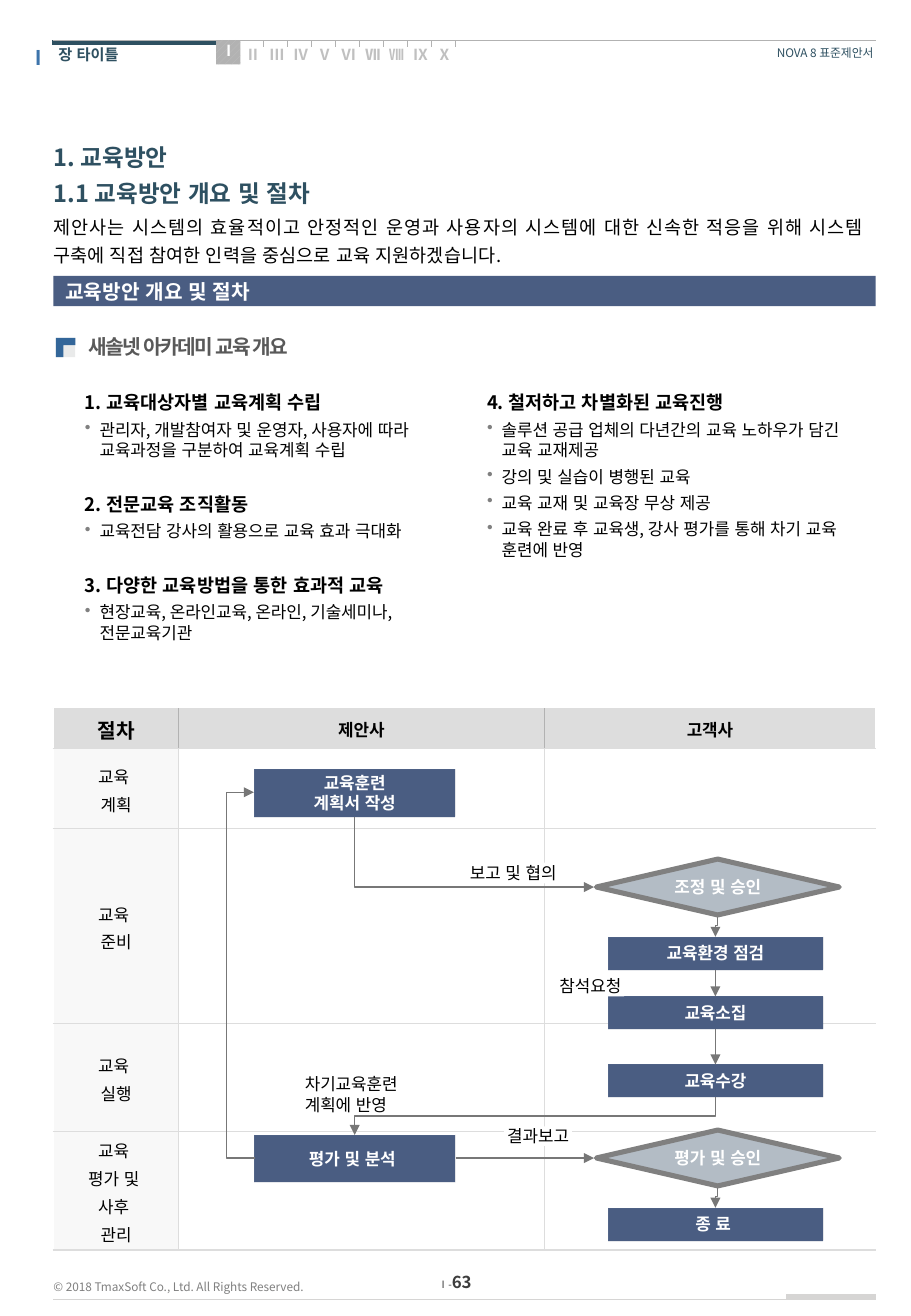
import lxml.etree
import pptx
import pptx.dml.color
import pptx.enum.dml
import pptx.enum.shapes
import pptx.enum.text
import pptx.oxml.ns
import pptx.util

FONT = "Noto Sans CJK KR"
HUES = {"ink": "000000", "white": "FFFFFF", "teal": "2E5061", "navy": "4A5D82", "blue": "336699",
        "mark": "3D74AB", "steel": "B3BCC5", "edge": "808080", "arrow": "777777", "dim": "C0C0C0",
        "mid": "B2B2B2", "foot": "D6D5D4", "head": "DDDDDD", "side": "F8F8F8",
        "pale": "E9EAEA", "page": "3D3D3D", "gray": "595959"}
WIDE, HIGH = 7.5, 10.83
LEFT, SPAN = 0.44, 6.77
RIGHT = LEFT + SPAN
COLS = [1.03, 3.01, 2.73]
ROWS = [0.33, 0.66, 1.6, 0.89, 0.98]
SELF_X, CLIENT_X = 2.92, 5.89   # centre lines of the two flow lanes
GATE_X = 5.91
FORM = pptx.enum.shapes.MSO_SHAPE
LINK = pptx.enum.shapes.MSO_CONNECTOR
ALIGN = pptx.enum.text.PP_ALIGN
ANCHOR = pptx.enum.text.MSO_ANCHOR
qn = pptx.oxml.ns.qn


def inch(*nums):
    return [pptx.util.Inches(num) for num in nums]


def hue(name):
    return pptx.dml.color.RGBColor.from_string(HUES[name])


def add_run(par, words, size, color="ink", bold=False, track=0):
    run = par.add_run()
    run.text = words
    run.font.size, run.font.bold, run.font.name = pptx.util.Pt(size), bold, FONT
    run.font.color.rgb = hue(color)
    props = run.font._element
    lxml.etree.SubElement(props, qn("a:ea")).set("typeface", FONT)
    props.set("lang", "ko-KR")
    props.set("kern", "0")
    if track:
        props.set("spc", str(track))


def set_frame(frame, pad=(0, 0, 0, 0), anchor=ANCHOR.TOP, wrap=True):
    frame.auto_size = pptx.enum.text.MSO_AUTO_SIZE.NONE
    frame.word_wrap, frame.vertical_anchor = wrap, anchor
    frame.margin_left, frame.margin_top, frame.margin_right, frame.margin_bottom = inch(*pad)


def next_par(frame, index):
    return frame.add_paragraph() if index else frame.paragraphs[0]


def fill_text(frame, lines, size, color="ink", bold=False, align=ALIGN.LEFT, space=None, track=0):
    for index, line in enumerate(lines):
        par = next_par(frame, index)
        par.alignment, par.line_spacing = align, space
        add_run(par, line, size, color, bold, track)


def add_text(slide, at, line, size, color, bold=False, align=ALIGN.LEFT,
             anchor=ANCHOR.TOP, wrap=False, track=0):
    frame = slide.shapes.add_textbox(*inch(*at)).text_frame
    set_frame(frame, anchor=anchor, wrap=wrap)
    fill_text(frame, [line], size, color, bold, align, track=track)


def add_form(slide, kind, at, fill, edge=None):
    form = slide.shapes.add_shape(kind, *inch(*at))
    form.shadow.inherit = False
    form.fill.solid()
    form.fill.fore_color.rgb = hue(fill)
    if edge:
        form.line.color.rgb, form.line.width = hue(edge), pptx.util.Pt(3)
    else:
        form.line.fill.background()
    return form


def add_step(slide, mid, top, wide, high, *lines):
    step = add_form(slide, FORM.BEVEL, (mid - wide / 2, top, wide, high), "navy")
    step.adjustments[0] = 0
    set_frame(step.text_frame, (0.05, 0.04, 0.05, 0.04), ANCHOR.MIDDLE)
    fill_text(step.text_frame, lines, 10, "white", True, ALIGN.CENTER)


def add_gate(slide, top, line):
    gate = add_form(slide, FORM.DIAMOND, (GATE_X - 1, top, 2, 0.46), "steel", "edge")
    set_frame(gate.text_frame, anchor=ANCHOR.MIDDLE, wrap=False)
    fill_text(gate.text_frame, [line], 10, "white", True, ALIGN.CENTER)


def add_label(slide, at, *lines, align=ALIGN.CENTER):
    label = add_form(slide, FORM.RECTANGLE, at, "white")
    set_frame(label.text_frame, anchor=ANCHOR.MIDDLE, wrap=False)
    fill_text(label.text_frame, lines, 10, align=align)


def add_line(slide, ends, color, width, kind=LINK.STRAIGHT):
    line = slide.shapes.add_connector(kind, *inch(*ends))
    line.line.color.rgb, line.line.width = hue(color), pptx.util.Pt(width)
    lxml.etree.SubElement(line._element.spPr, qn("a:effectLst"))
    return line


def add_arrow(slide, ends, kind=LINK.STRAIGHT, bend=None):
    arrow = add_line(slide, ends, "arrow", 0.75, kind)
    lxml.etree.SubElement(arrow.line._get_or_add_ln(), qn("a:tailEnd")).set("type", "triangle")
    if bend is not None:
        guide = lxml.etree.SubElement(arrow._element.spPr.find(".//" + qn("a:avLst")), qn("a:gd"))
        guide.set("name", "adj1")
        guide.set("fmla", f"val {round(bend * 100000)}")
    return arrow


def add_drop(slide, x1, y1, x2, y2, bend=None):
    """Elbow arrow that leaves downward; without a bend it has one corner only."""
    long, deep = y2 - y1, abs(x2 - x1)
    left, top = (x1 + x2 - long) / 2, (y1 + y2 - deep) / 2
    arrow = add_arrow(slide, (left, top, left + long, top + deep), LINK.ELBOW, bend)
    frame = arrow._element.spPr.find(qn("a:xfrm"))
    frame.set("rot", str((270 if x2 > x1 else 90) * 60000))
    if x2 > x1:
        frame.set("flipH", "1")
    if bend is None:
        arrow._element.spPr.find(qn("a:prstGeom")).set("prst", "bentConnector2")


def add_list(slide, left, groups):
    frame = slide.shapes.add_textbox(*inch(left, 3.17, 3.14, 2.4)).text_frame
    set_frame(frame, (0.08, 0.05, 0.04, 0.05))
    items = [(line, not spot) for group in groups for spot, line in enumerate(group)]
    for index, (line, head) in enumerate(items):
        par = next_par(frame, index)
        props = par._p.get_or_add_pPr()
        props.set("marL", str(inch(0.12)[0]))
        props.set("indent", str(-inch(0.12)[0]))
        if index:
            par.space_before = pptx.util.Pt(19.2 if head else 3.6)
        if not head:
            color = lxml.etree.SubElement(props, qn("a:buClr"))
            lxml.etree.SubElement(color, qn("a:srgbClr")).set("val", HUES["edge"])
            lxml.etree.SubElement(props, qn("a:buChar")).set("char", "•")
        add_run(par, line, 11 if head else 10, bold=head)


def set_edge(cell, side, color, width):
    props = cell._tc.get_or_add_tcPr()
    line = lxml.etree.Element(qn("a:ln" + side), w=str(pptx.util.Pt(width)))
    paint = lxml.etree.SubElement(line, qn("a:solidFill"))
    lxml.etree.SubElement(paint, qn("a:srgbClr")).set("val", HUES[color])
    props.insert(len(props.findall("*")) - 1, line)


def add_grid(slide):
    grid = slide.shapes.add_table(5, 3, *inch(LEFT, 5.83, SPAN, sum(ROWS))).table
    for col, wide in zip(grid.columns, COLS):
        col.width = inch(wide)[0]
    for row, high in zip(grid.rows, ROWS):
        row.height = inch(high)[0]
    heads = ["절차", "제안사", "고객사"]
    sides = [["교육 ", "계획"], ["교육 ", "준비"], ["교육 ", "실행"], ["교육 ", "평가 및 ", "사후 ", "관리"]]
    for r in range(5):
        for c in range(3):
            cell = grid.cell(r, c)
            cell.margin_left = cell.margin_right = inch(0.06)[0]
            cell.margin_top = cell.margin_bottom = inch(0.03)[0]
            cell.vertical_anchor = ANCHOR.MIDDLE
            cell.fill.solid()
            cell.fill.fore_color.rgb = hue("head" if r == 0 else "white" if c else "side")
            inner = "head" if r else "mid"
            if c > 0:
                set_edge(cell, "L", inner, 0.5)
            if c < 2:
                set_edge(cell, "R", inner, 0.5)
            set_edge(cell, "T", "head", 0.5)
            set_edge(cell, "B", "head", 1.5 if r == 4 else 0.5)
            if r == 0:
                fill_text(cell.text_frame, [heads[c]], 10 if c else 12, bold=True,
                          align=ALIGN.CENTER, space=1.1)
            elif c == 0:
                fill_text(cell.text_frame, sides[r - 1], 10, align=ALIGN.CENTER, space=1.15)


def add_header(slide):
    add_text(slide, (0.48, 0.37, 1.28, 0.15), "장 타이틀", 9, "teal", True)
    add_text(slide, (6.37, 0.38, 0.82, 0.12), "NOVA 8 표준제안서", 7, "teal", align=ALIGN.RIGHT)
    add_line(slide, (1.78, 0.35, 0.43, 0.35), "teal", 3.5)
    add_line(slide, (RIGHT, 0.33, LEFT, 0.33), "mid", 0.3)
    add_text(slide, (0.28, 0.37, 0.08, 0.22), "Ⅰ", 12, "mark", True, ALIGN.CENTER)
    for index, mark in enumerate("ⅡⅢⅣⅤⅥⅦⅧⅨⅩ"):
        shift = 0.197 * index
        add_text(slide, (2.02 + shift, 0.37, 0.12, 0.15), mark, 9, "dim", True)
        add_line(slide, (2.17 + shift, 0.33, 2.17 + shift, 0.39), "mid", 0.3)
    tab = add_form(slide, FORM.RECTANGLE, (1.78, 0.33, 0.2, 0.2), "mid")
    tab.fill.patterned()
    tab.fill.pattern = pptx.enum.dml.MSO_PATTERN.WIDE_UPWARD_DIAGONAL
    tab.fill.fore_color.rgb, tab.fill.back_color.rgb = hue("dim"), hue("mid")
    add_text(slide, (1.82, 0.34, 0.12, 0.15), "Ⅰ", 9, "white", True)


def add_footer(slide):
    frame = slide.shapes.add_textbox(*inch(3.5, 10.46, 0.49, 0.17)).text_frame
    set_frame(frame, anchor=ANCHOR.MIDDLE, wrap=False)
    frame.paragraphs[0].alignment = ALIGN.CENTER
    add_run(frame.paragraphs[0], "Ⅰ-", 6, "page")
    add_run(frame.paragraphs[0], "63", 10, "page", True)
    add_text(slide, (LEFT, 10.47, 2.32, 0.24), "© 2018 TmaxSoft Co., Ltd. All Rights Reserved.",
             7, "edge", anchor=ANCHOR.MIDDLE)
    add_line(slide, (RIGHT, 10.69, LEFT, 10.69), "foot", 0.3)
    add_line(slide, (RIGHT, 10.67, 6.47, 10.67), "foot", 3.5)


def add_intro(slide):
    title, body = slide.placeholders
    title.left, title.top, title.width, title.height = inch(LEFT, 1.12, SPAN, 0.6)
    set_frame(title.text_frame)
    par = title.text_frame.paragraphs[0]
    par.alignment, par.line_spacing = ALIGN.LEFT, 1.25
    add_run(par, "1. 교육방안", 14, "teal", True)
    par.add_line_break()
    add_run(par, "1.1 교육방안 개요 및 절차", 14, "teal", True)
    body.left, body.top, body.width, body.height = inch(LEFT, 1.73, SPAN, 0.52)
    set_frame(body.text_frame, (0, 0, 0.1, 0))
    par = body.text_frame.paragraphs[0]
    props = par._p.get_or_add_pPr()
    props.set("marL", "0")
    props.set("indent", "0")
    lxml.etree.SubElement(props, qn("a:buNone"))
    par.alignment, par.line_spacing, par.space_before = ALIGN.JUSTIFY, 1.25, 0
    add_run(par, "제안사는 시스템의 효율적이고 안정적인 운영과 사용자의 시스템에 대한 신속한 적응을 위해 "
            "시스템 구축에 직접 참여한 인력을 중심으로 교육 지원하겠습니다.", 11)
    band = add_form(slide, FORM.RECTANGLE, (LEFT, 2.27, SPAN, 0.25), "navy")
    set_frame(band.text_frame, (0.1, 0, 0.1, 0), ANCHOR.MIDDLE)
    fill_text(band.text_frame, ["교육방안 개요 및 절차"], 12, "white", True)
    add_text(slide, (0.73, 2.75, 2.96, 0.2), "새솔넷 아카데미 교육 개요", 12, "gray", True,
             anchor=ANCHOR.MIDDLE, wrap=True, track=-100)
    add_form(slide, FORM.RECTANGLE, (0.46, 2.78, 0.16, 0.16), "pale")
    hook = add_form(slide, FORM.CORNER, (0.46, 2.78, 0.16, 0.16), "blue")
    hook.rotation = 90
    hook.adjustments[0] = hook.adjustments[1] = 0.38


def add_flow(slide):
    add_step(slide, SELF_X, 6.33, 1.65, 0.39, "교육훈련", "계획서 작성")
    add_step(slide, SELF_X, 9.34, 1.65, 0.39, "평가 및 분석 ")
    for top, line in [(7.71, "교육환경 점검"), (8.2, "교육소집"), (8.76, "교육수강"), (9.94, "종 료 ")]:
        add_step(slide, CLIENT_X, top, 1.77, 0.27, line)
    add_label(slide, (3.83, 7.1, 0.79, 0.17), "보고 및 협의")
    add_label(slide, (4.15, 9.27, 0.56, 0.16), "결과보고")
    add_label(slide, (4.58, 8.03, 0.56, 0.17), "참석요청")
    for top, line in [(7.07, "조정 및 승인"), (9.3, "평가 및 승인")]:
        add_gate(slide, top, line)
        add_drop(slide, GATE_X, top + 0.48, CLIENT_X, top + 0.64, 0.43)
    add_drop(slide, SELF_X, 6.72, 4.89, 7.3)
    add_drop(slide, CLIENT_X, 9.03, SELF_X, 9.34, 0.5)
    add_arrow(slide, (2.1, 9.53, 2.09, 6.52), LINK.ELBOW, 24)
    for top, end in [(7.98, 8.2), (8.47, 8.76)]:
        add_arrow(slide, (CLIENT_X, top, CLIENT_X, end))
    add_arrow(slide, (3.75, 9.53, 4.89, 9.53))
    add_label(slide, (2.51, 8.84, 0.83, 0.33), "차기교육훈련", "계획에 반영", align=ALIGN.LEFT)


def main():
    deck = pptx.Presentation()
    deck.slide_width, deck.slide_height = inch(WIDE, HIGH)
    slide = deck.slides.add_slide(deck.slide_layouts[1])
    add_footer(slide)
    add_header(slide)
    add_intro(slide)
    add_list(slide, 0.62, [
        ["1. 교육대상자별 교육계획 수립", "관리자, 개발참여자 및 운영자, 사용자에 따라 교육과정을 구분하여 교육계획 수립"],
        ["2. 전문교육 조직활동", "교육전담 강사의 활용으로 교육 효과 극대화"],
        ["3. 다양한 교육방법을 통한 효과적 교육", "현장교육, 온라인교육, 온라인, 기술세미나, 전문교육기관"]])
    add_list(slide, 3.93, [
        ["4. 철저하고 차별화된 교육진행", "솔루션 공급 업체의 다년간의 교육 노하우가 담긴 교육 교재제공",
         "강의 및 실습이 병행된 교육", "교육 교재 및 교육장 무상 제공",
         "교육 완료 후 교육생, 강사 평가를 통해 차기 교육 훈련에 반영"]])
    add_grid(slide)
    add_flow(slide)
    deck.save("out.pptx")


if __name__ == "__main__":
    main()
